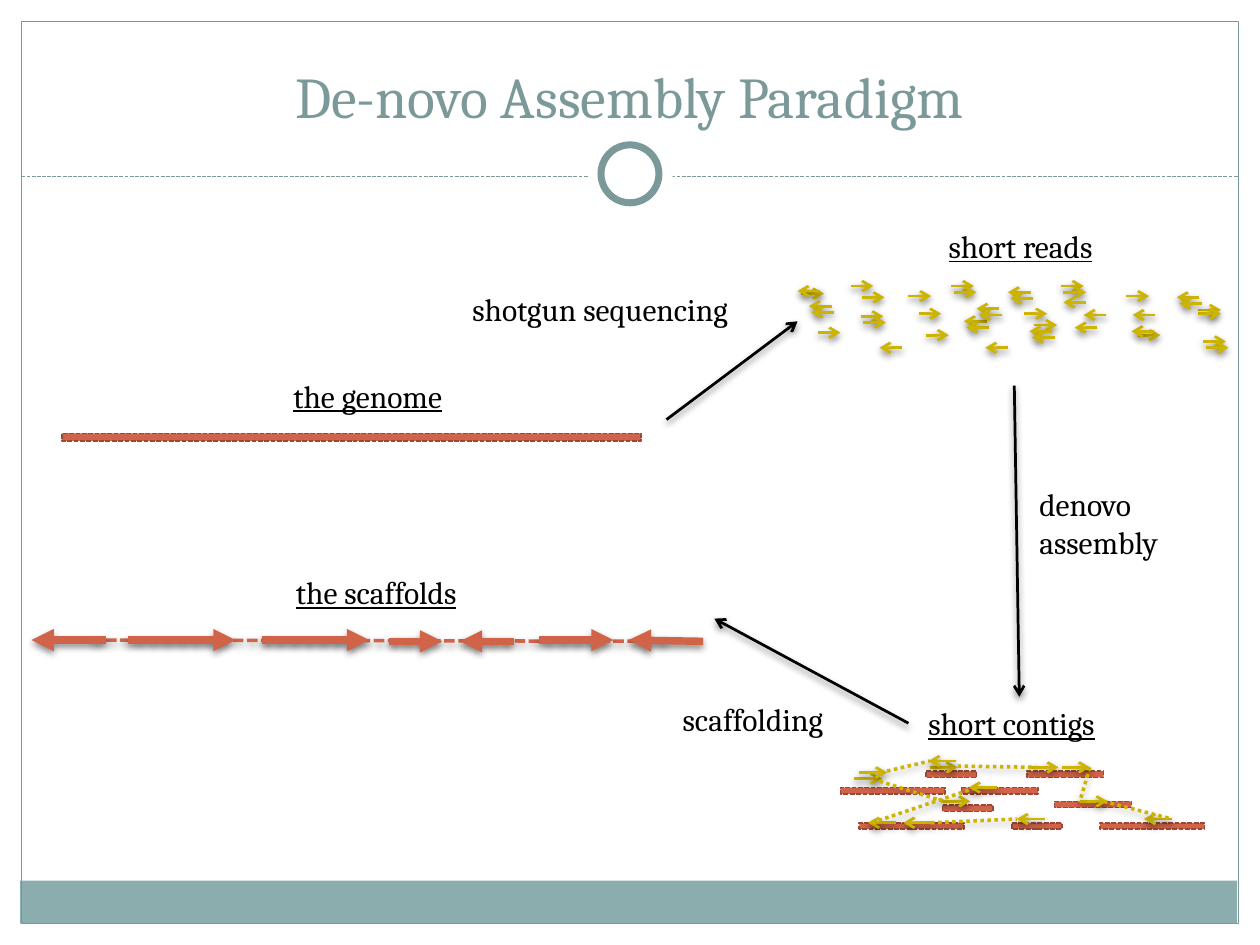
"""Build the De-novo Assembly Paradigm slide."""
from dataclasses import dataclass
from typing import Optional, Union

from lxml.etree import SubElement
from pptx import Presentation
from pptx.dml.color import RGBColor
from pptx.enum.dml import MSO_LINE as Dash
from pptx.enum.shapes import MSO_CONNECTOR as Link, MSO_SHAPE as Preset
from pptx.enum.text import MSO_ANCHOR as Anchor, MSO_AUTO_SIZE as Fit, PP_ALIGN as Align
from pptx.oxml.ns import qn
from pptx.shapes.shapetree import GroupShapes, SlideShapes
from pptx.util import Inches, Pt

Canvas = Union[SlideShapes, GroupShapes]
Point = tuple[float, float]


@dataclass(frozen=True)
class Theme:
    """Colours, font and type sizes of the slide."""
    font: str = "Cambria"
    title_size: float = 33
    label_size: float = 18
    teal: str = "7C999A"
    band: str = "8CADAE"
    white: str = "FFFFFF"
    black: str = "000000"
    sequence: str = "D16349"
    sequence_edge: str = "9B4936"
    read: str = "CCB400"


@dataclass(frozen=True)
class Stroke:
    """Look of a line: colour, width, dash, arrowhead and shadow strength."""
    color: str
    width: float
    dash: Optional[Dash] = None
    head: str = ""
    shadow: int = 0


@dataclass(frozen=True)
class Label:
    """Text lines with their place and size."""
    lines: tuple[str, ...]
    left: float
    top: float
    width: float
    height: float = 0.4
    underline: bool = False


@dataclass(frozen=True)
class Bar:
    """A horizontal stretch of sequence."""
    left: float
    top: float
    width: float
    height: float = 0.05


THEME = Theme()
RULE = Stroke(THEME.teal, 0.75, Dash.SQUARE_DOT)
FRAME = Stroke(THEME.teal, 0.75)
RING = Stroke(THEME.teal, 4)
EDGE = Stroke(THEME.sequence_edge, 0.9, Dash.SQUARE_DOT)
STEP = Stroke(THEME.black, 1.57, head="arrow", shadow=45)
READ = Stroke(THEME.read, 1.57, head="arrow", shadow=45)
MATE = Stroke(THEME.read, 2, Dash.ROUND_DOT, shadow=35)
GAP = Stroke(THEME.sequence, 2, Dash.SQUARE_DOT, shadow=35)
SCAFFOLD = Stroke(THEME.sequence, 4.25, head="triangle", shadow=45)

READ_LENGTH = 0.18
CONTIG_READ_LENGTH = 0.22
PAIR_SHIFT = (0.02, 0.05)

GENOME = Bar(0.49, 3.44, 4.6, 0.06)
CONTIGS = (
    Bar(8.73, 6.53, 0.83), Bar(6.67, 6.25, 0.83), Bar(6.82, 6.53, 0.83),
    Bar(7.48, 6.39, 0.4), Bar(7.35, 6.12, 0.4), Bar(8.03, 6.53, 0.4),
    Bar(7.63, 6.25, 0.61), Bar(8.15, 6.12, 0.61), Bar(8.37, 6.36, 0.61),
)
CONTIG_READS_RIGHT = ((6.78, 6.18), (7.38, 6.09), (6.82, 6.13), (8.57, 6.36),
                      (7.48, 6.36), (8.18, 6.09), (8.43, 6.09))
CONTIG_READS_LEFT = ((7.59, 6.04), (9.3, 6.5), (8.29, 6.5), (7.91, 6.25),
                     (7.11, 6.53), (7.39, 6.53))
MATES = (
    ((7.04, 6.12), (7.38, 6.04)), ((6.98, 6.2), (7.49, 6.36)),
    ((6.92, 6.53), (7.75, 6.25)), ((7.39, 6.53), (8.07, 6.5)),
    ((7.6, 6.08), (8.23, 6.09)), ((8.65, 6.09), (8.57, 6.36)),
    ((8.76, 6.36), (9.3, 6.5)),
)
SCAFFOLDS = (
    ((3.09, 5.09), (3.51, 5.09)), ((4.08, 5.09), (3.65, 5.09)),
    ((2.08, 5.08), (2.93, 5.08)), ((1.02, 5.08), (1.87, 5.08)),
    ((4.28, 5.08), (4.87, 5.08)), ((0.84, 5.08), (0.25, 5.08)),
    ((5.58, 5.09), (4.99, 5.08)),
)
READS_RIGHT = ((9.51, 2.46), (6.36, 2.33), (6.75, 2.27), (7.21, 2.35), (8.13, 2.49),
               (8.21, 2.58), (6.84, 2.36), (9.51, 2.49), (8.94, 2.35), (7.29, 2.49),
               (6.49, 2.64), (7.35, 2.66), (9.03, 2.66))
PAIRS_RIGHT = ((7.55, 2.27), (8.42, 2.27), (9.55, 2.71), (6.83, 2.51))
PAIRS_LEFT = ((8.18, 2.32), (8.35, 2.63), (7.83, 2.55), (6.6, 2.43), (9.52, 2.36), (7.93, 2.45))
READS_LEFT = ((6.51, 2.31), (9.16, 2.63), (9.17, 2.5), (8.62, 2.4), (8.78, 2.5),
              (8.71, 2.6), (8, 2.76), (7.16, 2.76))


def style_line(line, stroke: Stroke) -> None:
    """Apply colour, width and dash to a line."""
    line.color.rgb = RGBColor.from_string(stroke.color)
    line.width = Pt(stroke.width)
    if stroke.dash is not None:
        line.dash_style = stroke.dash


def draw_line(canvas: Canvas, start: Point, end: Point, stroke: Stroke) -> None:
    """Draw a straight line with its arrowhead and shadow."""
    link = canvas.add_connector(Link.STRAIGHT, *map(Inches, start + end))
    style_line(link.line, stroke)
    properties = link.element.spPr
    if stroke.head:
        SubElement(properties.find(qn("a:ln")), qn("a:tailEnd"), type=stroke.head)
    effects = SubElement(properties, qn("a:effectLst"))
    if stroke.shadow:
        shadow = SubElement(effects, qn("a:outerShdw"), blurRad=str(Pt(4)), dist=str(Pt(2)),
                            dir="5400000", rotWithShape="0")
        color = SubElement(shadow, qn("a:srgbClr"), val=THEME.black)
        SubElement(color, qn("a:alpha"), val=str(stroke.shadow * 1000))


def draw_shape(canvas: Canvas, preset: Preset, place: tuple[float, ...],
               fill: str = "", stroke: Optional[Stroke] = None) -> None:
    """Draw a preset shape with an optional fill and outline."""
    shape = canvas.add_shape(preset, *map(Inches, place))
    shape.shadow.inherit = False
    if fill:
        shape.fill.solid()
        shape.fill.fore_color.rgb = RGBColor.from_string(fill)
    else:
        shape.fill.background()
    if stroke:
        style_line(shape.line, stroke)
    else:
        shape.line.fill.background()


def draw_bar(canvas: Canvas, bar: Bar) -> None:
    """Draw a stretch of sequence."""
    draw_shape(canvas, Preset.RECTANGLE, (bar.left, bar.top, bar.width, bar.height),
               THEME.sequence, EDGE)


def draw_reads(canvas: Canvas, starts: tuple[Point, ...], step: float) -> None:
    """Draw read arrows that run by the signed step from each start."""
    for x, y in starts:
        draw_line(canvas, (x, y), (x + step, y), READ)


def paired(starts: tuple[Point, ...]) -> tuple[Point, ...]:
    """Give every start a second one, shifted right and down."""
    dx, dy = PAIR_SHIFT
    return tuple(point for x, y in starts for point in ((x, y), (x + dx, y + dy)))


def write(para, text: str, *, size: float, color: str, underline: bool = False,
          align: Align = Align.LEFT) -> None:
    """Add formatted text to a paragraph."""
    para.alignment = align
    span = para.add_run()
    span.text = text
    span.font.name, span.font.size = THEME.font, Pt(size)
    span.font.color.rgb = RGBColor.from_string(color)
    if underline:
        span.font.underline = True


def draw_label(canvas: Canvas, label: Label) -> None:
    """Draw a text label, one paragraph to a line."""
    box = canvas.add_textbox(*map(Inches, (label.left, label.top, label.width, label.height)))
    frame = box.text_frame
    frame.word_wrap = len(label.lines) > 1
    frame.auto_size = Fit.SHAPE_TO_FIT_TEXT
    for index, text in enumerate(label.lines):
        para = frame.add_paragraph() if index else frame.paragraphs[0]
        write(para, text, size=THEME.label_size, color=THEME.black, underline=label.underline)


def draw_title(page, text: str) -> None:
    """Place and fill the title placeholder."""
    title = page.shapes.title
    title.left, title.top, title.width, title.height = map(Inches, (0.33, 0.25, 9.33, 0.83))
    frame = title.text_frame
    frame.vertical_anchor, frame.word_wrap, frame.auto_size = Anchor.BOTTOM, True, Fit.NONE
    write(frame.paragraphs[0], text, size=THEME.title_size, color=THEME.teal, align=Align.CENTER)


def draw_frame(canvas: Canvas) -> None:
    """Draw the border, bottom band, dashed rule and ring."""
    draw_shape(canvas, Preset.RECTANGLE, (0.16, 6.99, 9.66, 0.34), THEME.band)
    draw_shape(canvas, Preset.RECTANGLE, (0.17, 0.17, 9.66, 7.16), stroke=FRAME)
    draw_line(canvas, (0.17, 1.4), (9.83, 1.4), RULE)
    draw_shape(canvas, Preset.OVAL, (4.67, 1.05, 0.67, 0.67), THEME.white)
    draw_shape(canvas, Preset.OVAL, (4.77, 1.15, 0.46, 0.46), THEME.white, RING)


def draw_contigs(canvas: Canvas) -> None:
    """Draw the contigs with their reads and mate links."""
    bars = canvas.add_group_shape().shapes
    for bar in CONTIGS:
        draw_bar(bars, bar)
    draw_label(canvas, Label(("short contigs",), 7.27, 5.54, 1.68, underline=True))
    reads = canvas.add_group_shape().shapes
    draw_reads(reads, CONTIG_READS_RIGHT, CONTIG_READ_LENGTH)
    draw_reads(reads, CONTIG_READS_LEFT, -CONTIG_READ_LENGTH)
    for start, end in MATES:
        draw_line(reads, start, end, MATE)


def draw_scaffolds(canvas: Canvas) -> None:
    """Draw the ordered scaffolds over their dashed gap line."""
    group = canvas.add_group_shape().shapes
    draw_line(group, (0.73, 5.08), (5.29, 5.09), GAP)
    for start, end in SCAFFOLDS:
        draw_line(group, start, end, SCAFFOLD)
    draw_label(group, Label(("the scaffolds",), 2.25, 4.5, 1.63, underline=True))


def draw_short_reads(canvas: Canvas) -> None:
    """Draw the cloud of short reads."""
    group = canvas.add_group_shape().shapes
    draw_label(group, Label(("short reads",), 7.43, 1.75, 1.46, underline=True))
    draw_reads(group, READS_RIGHT + paired(PAIRS_RIGHT), READ_LENGTH)
    draw_reads(group, paired(PAIRS_LEFT) + READS_LEFT, -READ_LENGTH)


def draw_genome(canvas: Canvas) -> None:
    """Draw the genome bar and its label."""
    group = canvas.add_group_shape().shapes
    draw_bar(group, GENOME)
    draw_label(group, Label(("the genome",), 2.23, 2.94, 1.56, underline=True))


def draw_steps(canvas: Canvas) -> None:
    """Draw the arrows between the stages and their labels."""
    for start, end, label in (
        ((5.29, 3.33), (6.33, 2.55), Label(("shotgun sequencing",), 3.65, 2.25, 2.49)),
        ((8.05, 3.06), (8.09, 5.53), Label(("denovo", "assembly"), 8.15, 3.8, 1.23, 0.71)),
        ((7.21, 5.74), (5.67, 4.91), Label(("scaffolding",), 5.32, 5.51, 1.46)),
    ):
        draw_line(canvas, start, end, STEP)
        draw_label(canvas, label)


def main() -> None:
    """Build and save the deck."""
    deck = Presentation()
    deck.slide_width, deck.slide_height = Inches(10), Inches(7.5)
    page = deck.slides.add_slide(deck.slide_layouts[5])
    draw_title(page, "De-novo Assembly Paradigm")
    for draw in (draw_frame, draw_contigs, draw_scaffolds, draw_short_reads,
                 draw_genome, draw_steps):
        draw(page.shapes)
    deck.save("out.pptx")


if __name__ == "__main__":
    main()
